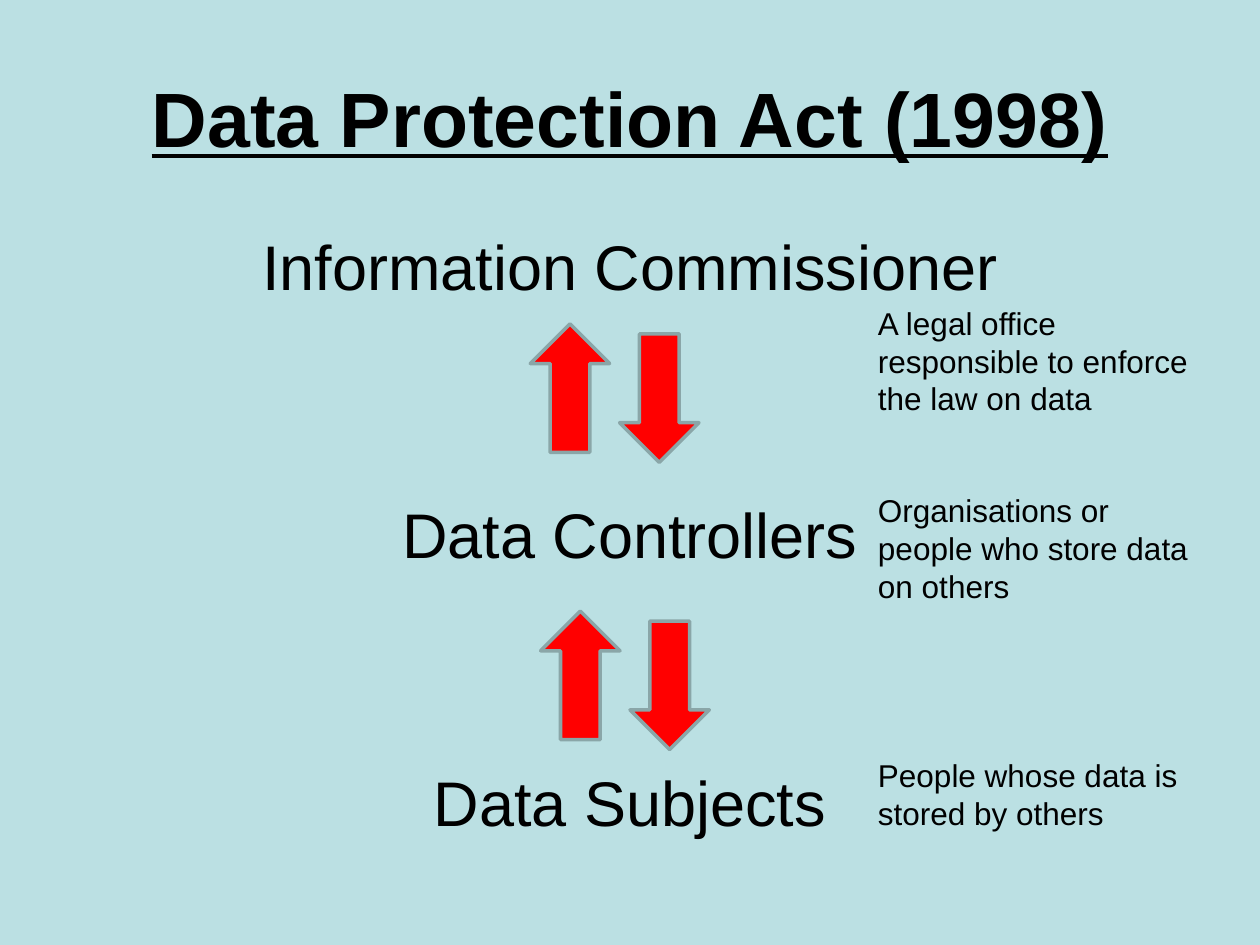
from pptx import Presentation
from pptx.dml.color import RGBColor
from pptx.enum.shapes import MSO_SHAPE
from pptx.enum.text import MSO_ANCHOR, MSO_AUTO_SIZE, PP_ALIGN
from pptx.oxml.ns import qn
from pptx.util import Cm, Pt
from lxml import etree

ARROW = MSO_SHAPE.UP_ARROW
LEFT, MID = PP_ALIGN.LEFT, PP_ALIGN.CENTER
TOP, CENTRE = MSO_ANCHOR.TOP, MSO_ANCHOR.MIDDLE
FIXED = MSO_AUTO_SIZE.NONE
GROW = MSO_AUTO_SIZE.SHAPE_TO_FIT_TEXT

# Content, lengths in cm
COLORS = {"back": "BBE0E3", "text": "000000", "arrow": "FF0000", "edge": "8AA6A8"}
TITLE = "Data Protection Act (1998)"
ROLES = ["Information Commissioner", "Data Controllers", "Data Subjects"]
NOTES = [  # text, top, height
    ("A legal office responsible to enforce the law on data", 6.0, 2.56),
    ("Organisations or people who store data on others", 9.78, 2.56),
    ("People whose data is stored by others", 15.11, 1.8),
]
PAIRS = [(10.69, 6.53), (10.9, 12.32)]  # left, top of each up arrow
WIDE, HIGH = 1.6, 2.59
STEP_X, STEP_Y = 1.8, 0.2  # from the up arrow to the down arrow
FIRST_GAP, ROLE_GAP = 3.5, 110  # points above a role


def color(name):
    return RGBColor.from_string(COLORS[name])


def place(shape, left, top, width, height):
    shape.left, shape.top = Cm(left), Cm(top)
    shape.width, shape.height = Cm(width), Cm(height)


def write(shape, lines, size, align=LEFT, anchor=TOP, fit=FIXED,
          bold=False, line=False, gaps=(0,)):
    frame = shape.text_frame
    frame.word_wrap = True
    frame.auto_size = fit
    frame.vertical_anchor = anchor
    for i, text in enumerate(lines):
        para = frame.paragraphs[0] if i == 0 else frame.add_paragraph()
        para.alignment = align
        para.space_before = Pt(gaps[min(i, len(gaps) - 1)])
        run = para.add_run()
        run.text = text
        font = run.font
        font.name, font.size = "Arial", Pt(size)
        font.bold, font.underline = bold, line
        font.color.rgb = color("text")


deck = Presentation()
deck.slide_width, deck.slide_height = Cm(25.4), Cm(19.05)
slide = deck.slides.add_slide(deck.slide_layouts[1])
slide.background.fill.solid()
slide.background.fill.fore_color.rgb = color("back")

# Title
title = slide.shapes.title
place(title, 1.27, 0.76, 22.86, 3.18)
write(title, [TITLE], 44, align=MID, anchor=CENTRE, bold=True, line=True)

# Roles, without bullets
body = slide.placeholders[1]
place(body, 1.27, 4.45, 22.86, 12.57)
write(body, ROLES, 36, align=MID, gaps=(FIRST_GAP, ROLE_GAP))
for para in body.text_frame.paragraphs:
    props = para._p.get_or_add_pPr()
    props.set("marL", "0")
    props.set("indent", "0")
    etree.SubElement(props, qn("a:buNone"))

# Arrow pairs
for left, top in PAIRS:
    group = slide.shapes.add_group_shape()
    for i, turn in enumerate((0, 180)):
        arrow = group.shapes.add_shape(
            ARROW, Cm(left + i * STEP_X), Cm(top + i * STEP_Y), Cm(WIDE), Cm(HIGH))
        arrow.rotation = turn
        arrow.shadow.inherit = False
        arrow.fill.solid()
        arrow.fill.fore_color.rgb = color("arrow")
        arrow.line.color.rgb = color("edge")
        arrow.line.width = Pt(2)

# Notes beside the roles
for text, top, height in NOTES:
    note = slide.shapes.add_textbox(Cm(17.45), Cm(top), Cm(7.21), Cm(height))
    write(note, [text], 18, fit=GROW)

deck.save("out.pptx")
